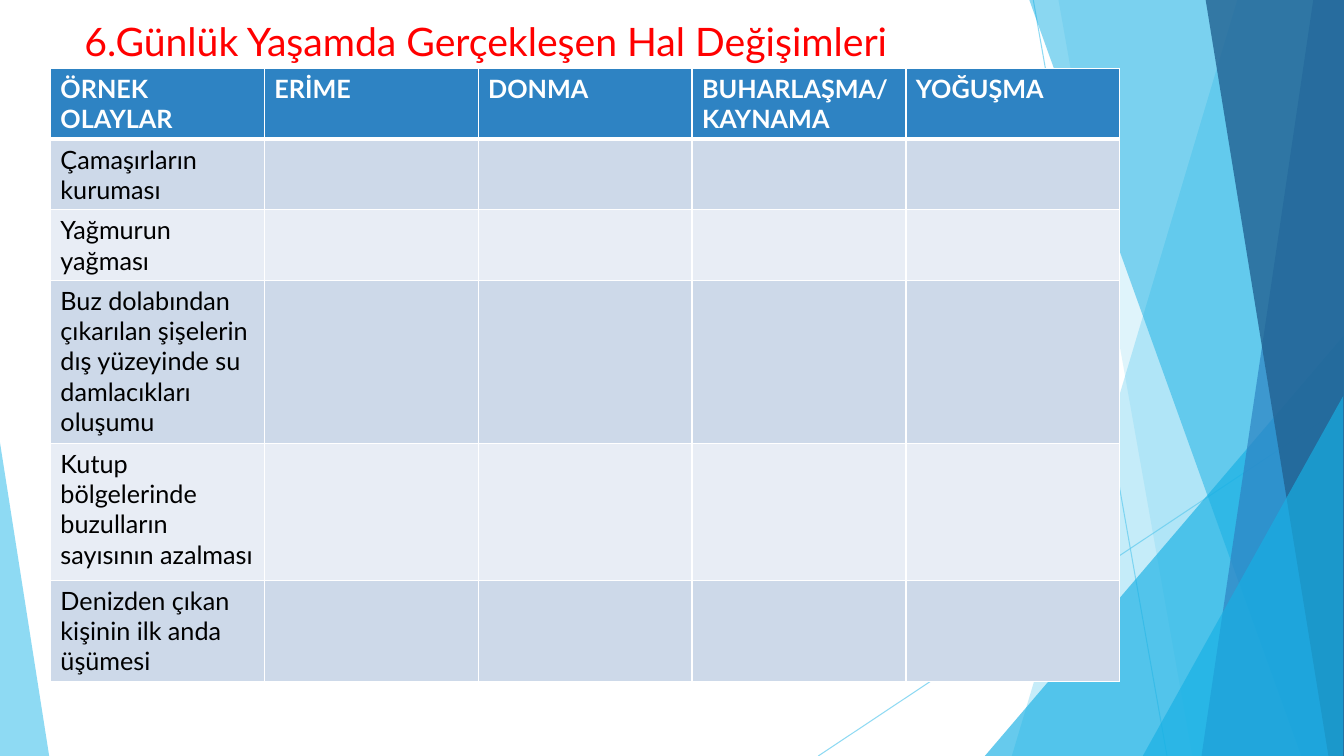
"""Builds the slide on changes of state in daily life, with its table of examples."""
from lxml.etree import SubElement
from pptx import Presentation
from pptx.dml.color import RGBColor
from pptx.enum.shapes import MSO_CONNECTOR as Connector, MSO_SHAPE as Shape
from pptx.enum.text import MSO_ANCHOR as Anchor
from pptx.oxml.ns import qn
from pptx.util import Cm, Pt

WIDTH, HEIGHT = 33.87, 19.05
FONT = "Lato"
SKY, CYAN, BLUE, NAVY = "5FCBEF", "17B0E4", "2E83C3", "226292"
WHITE, BLACK, RED = "FFFFFF", "000000", "FF0000"
BANDS = ["CDD9E9", "E8EDF5"]

TITLE = "6.Günlük Yaşamda Gerçekleşen Hal Değişimleri"
TITLE_BOX = (1.88, 0.3, 23.88, 2.97)
HEADINGS = [["ÖRNEK OLAYLAR"], ["ERİME"], ["DONMA"], ["BUHARLAŞMA/", "KAYNAMA"], ["YOĞUŞMA"]]
EXAMPLES = [
    "Çamaşırların kuruması",
    "Yağmurun yağması",
    "Buz dolabından çıkarılan şişelerin dış yüzeyinde su damlacıkları oluşumu",
    "Kutup bölgelerinde buzulların sayısının azalması",
    "Denizden çıkan kişinin ilk anda üşümesi",
]
TABLE_LEFT, TABLE_TOP, COLUMN_WIDTH = 1.27, 1.73, 5.39
ROW_HEIGHTS = [1.52, 1.52, 1.52, 4.11, 3.45, 2.29]

RAYS = [(26.04, 0, 29.41, HEIGHT), (WIDTH, 10.24, 20.62, HEIGHT)]
FACETS = [
    ("blade", (31.19, 25.5), SKY, 36),
    ("blade", (26.67, 30.05), SKY, 20),
    ("triangle", (24.82, 8.46, 9.04, 10.59, 1), CYAN, 66),
    ("blade", (25.93, 32.79), CYAN, 50),
    ("blade", (33.1, 30.28), BLUE, 70),
    ("blade", (30.38, 33.48), NAVY, 80),
    ("triangle", (28.8, 9.98, 5.05, 9.07, 1), CYAN, 66),
    ("triangle", (0, 11.15, 1.24, 7.9, 0), SKY, 70),
]


def paint(fill, color):
    fill.solid()
    fill.fore_color.rgb = RGBColor.from_string(color)


def set_opacity(shape, percent):
    for color in shape._element.spPr.iter(qn("a:srgbClr")):
        SubElement(color, qn("a:alpha"), val=str(percent * 1000))


def write(frame, lines, size, color, bold=False):
    frame.word_wrap = True
    for index, line in enumerate(lines):
        paragraph = frame.add_paragraph() if index else frame.paragraphs[0]
        run = paragraph.add_run()
        run.text = line
        run.font.name, run.font.size, run.font.bold = FONT, Pt(size), bold
        paint(run.font.fill, color)


def add_ray(slide, ends):
    ray = slide.shapes.add_connector(Connector.STRAIGHT, *map(Cm, ends))
    ray.line.width = Pt(0.75)
    paint(ray.line.fill, SKY)
    set_opacity(ray, 70)
    SubElement(ray._element.spPr, qn("a:effectLst"))


def add_facet(slide, kind, geometry, color, opacity):
    if kind == "blade":
        top_x, bottom_x = geometry
        outline = slide.shapes.build_freeform(Cm(top_x), Cm(-0.03))
        corners = [(WIDTH, -0.03), (WIDTH, HEIGHT), (bottom_x, HEIGHT)]
        outline.add_line_segments([(Cm(x), Cm(y)) for x, y in corners], close=True)
        facet = outline.convert_to_shape()
    else:
        *box, apex = geometry
        facet = slide.shapes.add_shape(Shape.ISOSCELES_TRIANGLE, *map(Cm, box))
        facet.adjustments[0] = apex
    facet.shadow.inherit = False
    facet.line.fill.background()
    paint(facet.fill, color)
    set_opacity(facet, opacity)


def add_border(cell, side, width):
    border = SubElement(cell._tc.get_or_add_tcPr(), qn(f"a:ln{side}"), w=str(Pt(width)))
    SubElement(SubElement(border, qn("a:solidFill")), qn("a:srgbClr"), val=WHITE)


def add_examples(slide):
    rows = [HEADINGS] + [[[example]] + [[]] * (len(HEADINGS) - 1) for example in EXAMPLES]
    table = slide.shapes.add_table(
        len(rows), len(HEADINGS), Cm(TABLE_LEFT), Cm(TABLE_TOP),
        Cm(COLUMN_WIDTH * len(HEADINGS)), Cm(sum(ROW_HEIGHTS))).table
    for column in table.columns:
        column.width = Cm(COLUMN_WIDTH)
    for r, (row, height) in enumerate(zip(rows, ROW_HEIGHTS)):
        table.rows[r].height = Cm(height)
        heading = r == 0
        for c, lines in enumerate(row):
            cell = table.cell(r, c)
            for side in "LRTB":
                thick = (r, side) in [(0, "B"), (1, "T")]
                add_border(cell, side, 3 if thick else 1)
            paint(cell.fill, BLUE if heading else BANDS[(r - 1) % 2])
            write(cell.text_frame, lines, 18, WHITE if heading else BLACK, heading)


def main():
    deck = Presentation()
    deck.slide_width, deck.slide_height = Cm(WIDTH), Cm(HEIGHT)
    slide = deck.slides.add_slide(deck.slide_layouts[6])
    for ends in RAYS:
        add_ray(slide, ends)
    for facet in FACETS:
        add_facet(slide, *facet)
    title = slide.shapes.add_textbox(*map(Cm, TITLE_BOX)).text_frame
    title.vertical_anchor = Anchor.TOP
    write(title, [TITLE], 28, RED)
    add_examples(slide)
    deck.save("out.pptx")


if __name__ == "__main__":
    main()
